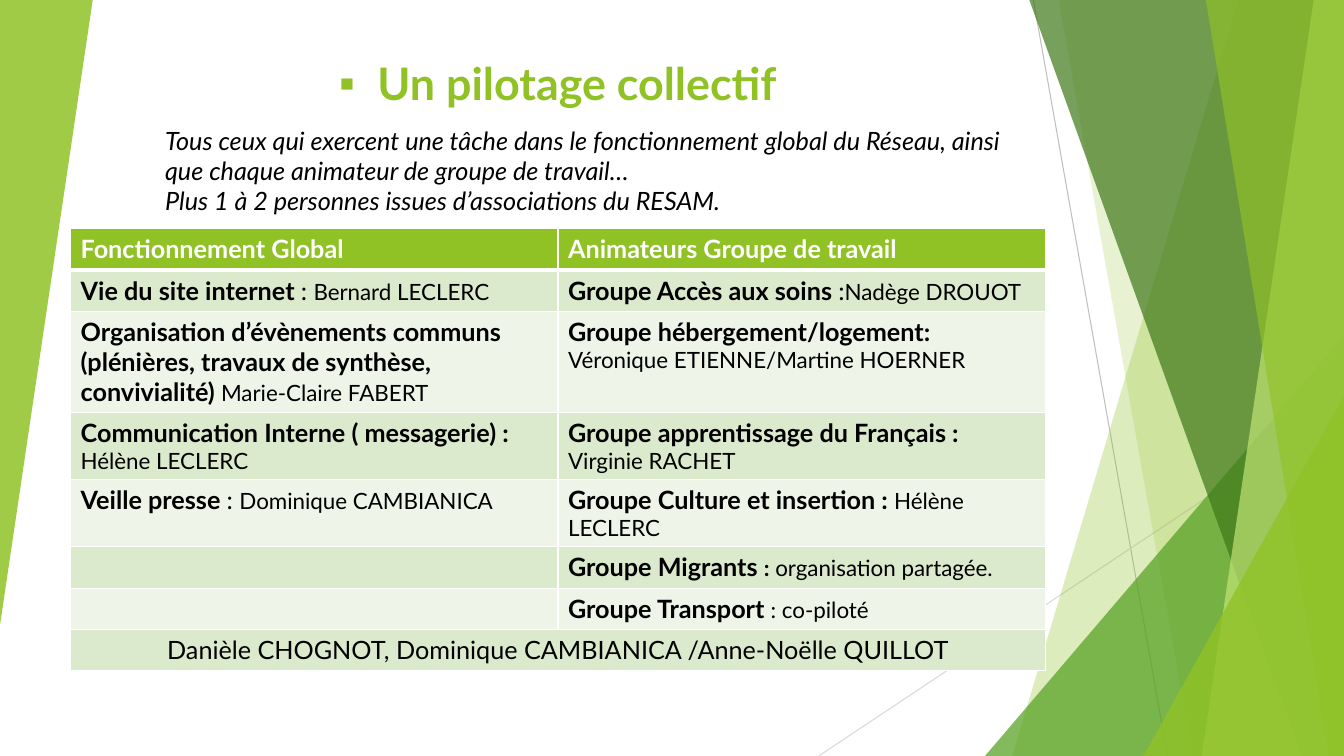
"""Build the slide on collective steering: green facets, title, intro and table."""
import pptx
import pptx.util
import pptx.dml.color
import pptx.enum.shapes
import pptx.enum.text
import pptx.oxml
import pptx.oxml.ns

Inches, Pt = pptx.util.Inches, pptx.util.Pt
RGB = pptx.dml.color.RGBColor.from_string
Kind = pptx.enum.shapes.MSO_SHAPE
Align = pptx.enum.text.PP_ALIGN
NS = pptx.oxml.ns.nsdecls("a")
HUE = {"lime": "90C226", "leaf": "54A021", "moss": "3F7819", "pale": "C0E474",
       "gray": "BFBFBF", "mist": "D9D9D9", "white": "FFFFFF", "black": "000000",
       "odd": "DBE9CD", "even": "EEF4E8"}

deck = pptx.Presentation()
deck.slide_width, deck.slide_height = Inches(13.33), Inches(7.5)
slide = deck.slides.add_slide(deck.slide_layouts[6])
shapes = slide.shapes


def share(*spots):
    """Turn alternating x and y percentages of the slide into lengths."""
    sides = deck.slide_width, deck.slide_height
    return [int(spot * sides[i % 2] / 100) for i, spot in enumerate(spots)]


def write(para, text, size, hue, bold=False, slant=False):
    """Add one run to a paragraph."""
    run = para.add_run()
    run.text = text
    font = run.font
    font.name, font.size, font.bold, font.italic = "Lato", Pt(size), bold, slant
    font.color.rgb = RGB(HUE[hue])


for hue, ends in (("gray", (76.89, 0, 86.87, 100)), ("mist", (100, 53.73, 60.92, 100))):
    line = shapes.add_connector(pptx.enum.shapes.MSO_CONNECTOR.STRAIGHT, *share(*ends))
    line.line.color.rgb = RGB(HUE[hue])
    line.line.width = Pt(0.75)
    line._element.spPr.append(pptx.oxml.parse_xml(f"<a:effectLst {NS}/>"))

facets = [
    ("band", "lime", 30, (92.12, 75.32)),
    ("band", "lime", 20, (78.77, 88.75)),
    ("wedge", "leaf", 72, (73.29, 44.4, 26.71, 55.6)),
    ("band", "moss", 70, (76.59, 96.85)),
    ("band", "pale", 70, (97.75, 89.42)),
    ("band", "lime", 65, (89.72, 98.87)),
    ("wedge", "lime", 80, (85.07, 52.4, 14.93, 47.6)),
    ("wedge", "lime", 85, (0, 0, 6.9, 82.67)),
]
for kind, hue, alpha, place in facets:
    if kind == "band":
        head, foot = place
        path = shapes.build_freeform(*share(head, 0), scale=1.0)
        path.add_line_segments([share(100, 0), share(100, 100), share(foot, 100)])
        facet = path.convert_to_shape()
    else:
        facet = shapes.add_shape(Kind.ISOSCELES_TRIANGLE, *share(*place))
        facet.adjustments[0] = 1
        facet.rotation = 180 if place[0] == 0 else 0
    facet.shadow.inherit = False
    facet.fill.solid()
    facet.fill.fore_color.rgb = RGB(HUE[hue])
    facet.line.fill.background()
    tint = facet._element.spPr.find(".//" + pptx.oxml.ns.qn("a:srgbClr"))
    tint.append(pptx.oxml.parse_xml(f'<a:alpha {NS} val="{alpha * 1000}"/>'))

title = shapes.add_textbox(*share(9, 0.4, 65.04, 14.8)).text_frame
title.word_wrap = True
title.vertical_anchor = pptx.enum.text.MSO_ANCHOR.BOTTOM
para = title.paragraphs[0]
para.alignment = Align.CENTER
write(para, "Un pilotage collectif", 32, "lime", bold=True)
props = para._p.get_or_add_pPr()
props.set("marL", str(Inches(0.38)))
props.set("indent", str(-Inches(0.38)))
for mark in ('buFont {} typeface="Arial"', 'buChar {} char="▪"'):
    props.append(pptx.oxml.parse_xml(f"<a:{mark.format(NS)}/>"))

intro = shapes.add_textbox(*share(11.55, 15.87, 63.69, 13.33)).text_frame
intro.word_wrap = True
lines = [
    "Tous ceux qui exercent une tâche dans le fonctionnement global du Réseau, "
    "ainsi que chaque animateur de groupe de travail…",
    "Plus 1 à 2 personnes issues d’associations du RESAM.",
]
for i, text in enumerate(lines):
    para = intro.add_paragraph() if i else intro.paragraphs[0]
    write(para, text, 18, "black", slant=True)

STYLE = {"B": (18, True), "b": (16, True), "N": (18, False), "n": (16, False)}
rows = [
    ([("B", "Fonctionnement Global")], [("B", "Animateurs Groupe de travail")]),
    ([("B", "Vie du site internet "), ("N", ": "), ("n", "Bernard LECLERC")],
     [("B", "Groupe Accès aux soins "), ("N", ":"), ("n", "Nadège DROUOT")]),
    ([("B", "Organisation d’évènements communs (plénières, travaux de synthèse, convivialité) "),
      ("n", "Marie-Claire FABERT")],
     [("B", "Groupe hébergement/logement: "), ("n", "Véronique ETIENNE/Martine HOERNER")]),
    ([("B", "Communication Interne ( messagerie) : "), ("n", "Hélène LECLERC")],
     [("B", "Groupe apprentissage du Français : "), ("n", "Virginie RACHET")]),
    ([("B", "Veille presse "), ("N", ": "), ("n", "Dominique CAMBIANICA")],
     [("B", "Groupe Culture et insertion : "), ("n", "Hélène LECLERC")]),
    ([], [("B", "Groupe Migrants "), ("b", ":"), ("n", " organisation partagée.")]),
    ([], [("B", "Groupe Transport "), ("n", ": co-piloté")]),
    ([("N", "Danièle CHOGNOT, Dominique CAMBIANICA /Anne-Noëlle QUILLOT")], []),
]
table = shapes.add_table(len(rows), 2, *share(5.25, 30.27, 72.54, 46.56)).table
table.horz_banding = False
for r, row in enumerate(rows):
    table.rows[r].height = share(0, 8.27 if r == 3 else 5.47)[1]
    for c, runs in enumerate(row):
        cell = table.cell(r, c)
        for side in "LRTB":
            if side == "T" and r:
                continue
            width = Pt(3 if side == "B" and r == 0 else 1)
            cell._tc.get_or_add_tcPr().append(pptx.oxml.parse_xml(
                f'<a:ln{side} {NS} w="{width}"><a:solidFill>'
                f'<a:srgbClr val="{HUE["white"]}"/></a:solidFill></a:ln{side}>'))
        cell.fill.solid()
        shade = "lime" if r == 0 else "odd" if r % 2 else "even"
        cell.fill.fore_color.rgb = RGB(HUE[shade])
        for key, text in runs:
            size, bold = STYLE[key]
            write(cell.text_frame.paragraphs[0], text, size, "black" if r else "white", bold)

last = table.cell(len(rows) - 1, 0)
last.merge(table.cell(len(rows) - 1, 1))
last.text_frame.paragraphs[0].alignment = Align.CENTER

deck.save("out.pptx")
